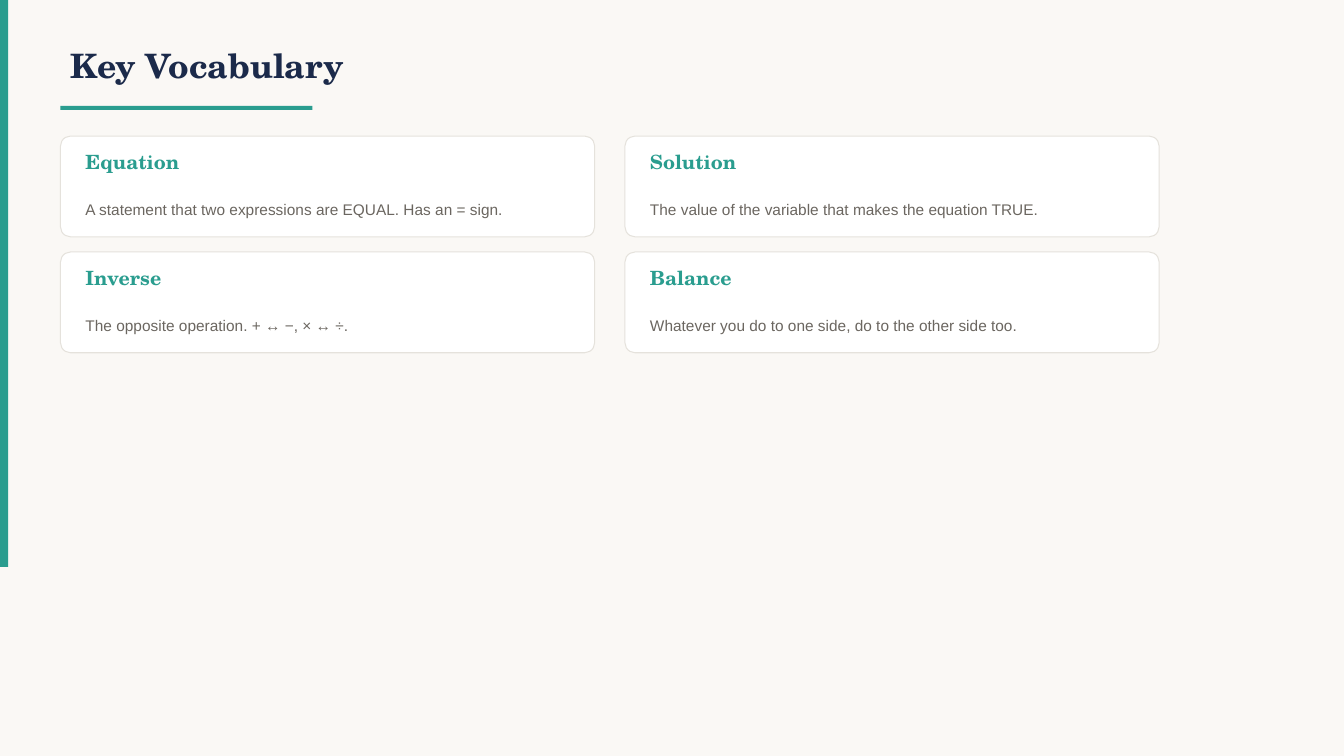
"""Builds the Key Vocabulary slide with a two-column grid of term cards."""
from pptx import Presentation
from pptx.dml.color import RGBColor
from pptx.enum.shapes import MSO_SHAPE
from pptx.enum.text import MSO_ANCHOR
from pptx.util import Pt

RECT = MSO_SHAPE.RECTANGLE
ROUNDED = MSO_SHAPE.ROUNDED_RECTANGLE
MIDDLE = MSO_ANCHOR.MIDDLE

TERMS = [
    ("Equation", "A statement that two expressions are EQUAL. Has an = sign."),
    ("Solution", "The value of the variable that makes the equation TRUE."),
    ("Inverse", "The opposite operation. + ↔ −, × ↔ ÷."),
    ("Balance", "Whatever you do to one side, do to the other side too."),
]


def color(value):
    return RGBColor.from_string(value)


class VocabularySlide:
    SERIF, SANS = "TeX Gyre Schola", "Arial"
    PAPER, TEAL, NAVY = "FAF8F5", "2A9D8F", "1B2A4A"
    WHITE, BORDER, GRAY = "FFFFFF", "E5E2DC", "6B6660"

    def __init__(self, prs):
        self.s = prs.slides.add_slide(prs.slide_layouts[6])
        fill = self.s.background.fill
        fill.solid()
        fill.fore_color.rgb = color(self.PAPER)

    def shape(self, kind, x, y, w, h, fill):
        sp = self.s.shapes.add_shape(kind, Pt(x), Pt(y), Pt(w), Pt(h))
        sp.shadow.inherit = False
        sp.fill.solid()
        sp.fill.fore_color.rgb = color(fill)
        sp.line.fill.background()
        return sp

    def text(self, text, x, y, w, h, size, ink, font, bold=False, spacing=None):
        tf = self.s.shapes.add_textbox(Pt(x), Pt(y), Pt(w), Pt(h)).text_frame
        tf.word_wrap = True
        tf.vertical_anchor = MIDDLE
        tf.text = text
        p = tf.paragraphs[0]
        p.line_spacing = spacing
        r = p.runs[0]
        r.font.name = font
        r.font.size = Pt(size)
        r.font.bold = bold
        r.font.color.rgb = color(ink)

    def card(self, x, y, term, meaning):
        sp = self.shape(ROUNDED, x, y, 381.6, 72, self.WHITE)
        sp.adjustments[0] = 0.1
        sp.line.color.rgb = color(self.BORDER)
        sp.line.width = Pt(0.75)
        self.text(term, x + 10.8, y + 5.76, 360, 25.2, 14, self.TEAL, self.SERIF, bold=True)
        self.text(meaning, x + 10.8, y + 32.4, 360, 36, 11, self.GRAY, self.SANS, spacing=1.3)


def main():
    prs = Presentation()
    prs.slide_width, prs.slide_height = Pt(960), Pt(540)
    slide = VocabularySlide(prs)
    slide.shape(RECT, 0, 0, 5.76, 405, slide.TEAL)
    slide.text("Key Vocabulary", 43.2, 21.6, 720, 50.4, 24, slide.NAVY, slide.SERIF, bold=True)
    slide.shape(RECT, 43.2, 75.6, 180, 2.88, slide.TEAL)
    for i, (term, meaning) in enumerate(TERMS):
        row, col = divmod(i, 2)
        slide.card(43.2 + col * 403.2, 97.2 + row * 82.8, term, meaning)
    prs.save("out.pptx")


if __name__ == "__main__":
    main()
